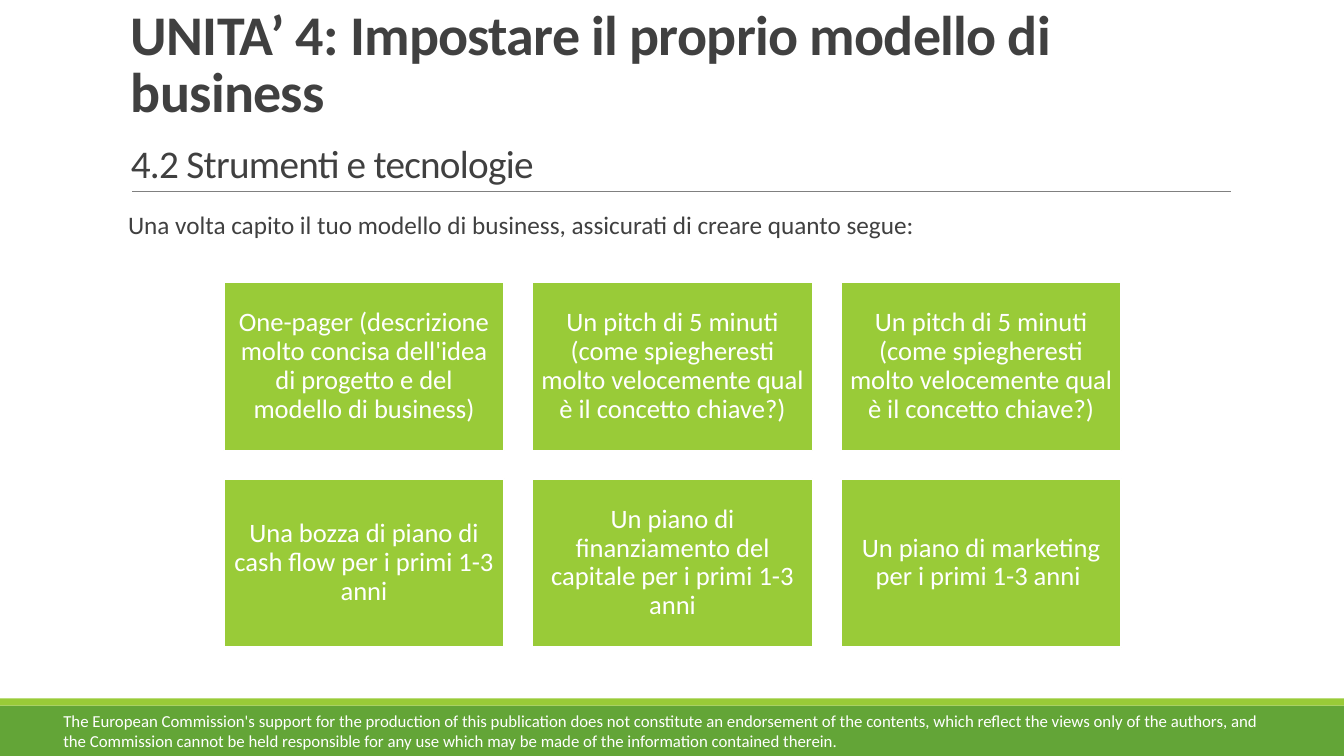
from pptx import Presentation
from pptx.dml.color import RGBColor
from pptx.enum.shapes import MSO_CONNECTOR, MSO_SHAPE
from pptx.enum.text import MSO_ANCHOR, PP_ALIGN
from pptx.oxml.ns import qn
from pptx.util import Inches, Pt
from lxml import etree

COLORS = {"dark_green": "63A537", "lime": "99CB38", "rule": "808080",
          "text": "404040", "white": "FFFFFF"}
SLIDE_WIDTH, SLIDE_HEIGHT = 13.33, 7.5
DELIVERABLES = [
    "One-pager (descrizione molto concisa dell'idea di progetto e del modello di business)",
    "Un pitch di 5 minuti (come spiegheresti molto velocemente qual è il concetto chiave?)",
    "Un pitch di 5 minuti (come spiegheresti molto velocemente qual è il concetto chiave?)",
    "Una bozza di piano di cash flow per i primi 1-3 anni",
    "Un piano di finanziamento del capitale per i primi 1-3 anni",
    "Un piano di marketing per i primi 1-3 anni ",
]
COLUMNS = 3
CARD_WIDTH, CARD_HEIGHT, CARD_GAP = 2.78, 1.67, 0.28
GRID_LEFT, GRID_TOP = 2.22, 2.8
DISCLAIMER = (
    "The European Commission's support for the production of this publication does not "
    "constitute an endorsement of the contents, which reflect the views only of the authors, "
    "and the Commission cannot be held responsible for any use which may be made of the "
    "information contained therein."
)


def rgb(name):
    return RGBColor.from_string(COLORS[name])


class SlideBuilder:
    """Holds the slide and its font, and adds styled elements."""

    def __init__(self, slide, font="Calibri"):
        self.slide = slide
        self.font = font

    def rectangle(self, left, top, width, height, fill, outline=None):
        box = self.slide.shapes.add_shape(
            MSO_SHAPE.RECTANGLE, Inches(left), Inches(top), Inches(width), Inches(height))
        box.shadow.inherit = False
        box.fill.solid()
        box.fill.fore_color.rgb = rgb(fill)
        if outline:
            box.line.color.rgb = rgb(outline)
            box.line.width = Pt(1.25)
        else:
            box.line.fill.background()
        return box

    def rule(self, left, right, y):
        line = self.slide.shapes.add_connector(
            MSO_CONNECTOR.STRAIGHT, Inches(left), Inches(y), Inches(right), Inches(y))
        line.line.color.rgb = rgb("rule")
        line.line.width = Pt(0.5)
        etree.SubElement(line.element.spPr, qn("a:effectLst"))

    def text_frame(self, left, top, width, height, anchor=MSO_ANCHOR.TOP):
        box = self.slide.shapes.add_textbox(
            Inches(left), Inches(top), Inches(width), Inches(height))
        frame = box.text_frame
        frame.word_wrap = True
        frame.vertical_anchor = anchor
        return frame

    def run(self, paragraph, text, size, color="text", bold=False, tracking=0):
        """Add a run; tracking is letter spacing in points."""
        run = paragraph.add_run()
        run.text = text
        run.font.name = self.font
        run.font.size = Pt(size)
        run.font.bold = bold
        run.font.color.rgb = rgb(color)
        if tracking:
            run.font._element.set("spc", str(round(tracking * 100)))

    def title(self, heading, subheading):
        frame = self.text_frame(1.2, 0.31, 11, 1.59, MSO_ANCHOR.BOTTOM)
        unit = frame.paragraphs[0]
        unit.line_spacing = 0.85
        self.run(unit, heading, 40, bold=True, tracking=-0.5)
        section = frame.add_paragraph()
        section.line_spacing = 0.85
        section.space_before = Pt(16)
        self.run(section, subheading, 28, tracking=-0.5)

    def introduction(self, text):
        frame = self.text_frame(1.27, 2.06, 10.9, 0.5)
        frame.margin_left = frame.margin_right = 0
        paragraph = frame.paragraphs[0]
        paragraph.alignment = PP_ALIGN.JUSTIFY
        paragraph.line_spacing = 0.9
        self.run(paragraph, text, 18)

    def card(self, left, top, text):
        frame = self.rectangle(left, top, CARD_WIDTH, CARD_HEIGHT, "lime", "white").text_frame
        frame.word_wrap = True
        frame.vertical_anchor = MSO_ANCHOR.MIDDLE
        frame.margin_left = frame.margin_right = Inches(0.08)
        frame.margin_top = frame.margin_bottom = Inches(0.08)
        paragraph = frame.paragraphs[0]
        paragraph.alignment = PP_ALIGN.CENTER
        paragraph.line_spacing = 0.9
        self.run(paragraph, text, 19, "white")

    def footer(self, text):
        self.rectangle(0, 7, SLIDE_WIDTH, 0.5, "dark_green")
        self.rectangle(0, 6.93, SLIDE_WIDTH, 0.07, "lime")
        frame = self.text_frame(0.53, 7, 12.3, 0.5)
        self.run(frame.paragraphs[0], text, 12, "white")


def main():
    presentation = Presentation()
    presentation.slide_width = Inches(SLIDE_WIDTH)
    presentation.slide_height = Inches(SLIDE_HEIGHT)
    builder = SlideBuilder(presentation.slides.add_slide(presentation.slide_layouts[6]))

    builder.footer(DISCLAIMER)
    builder.rule(1.31, 12.21, 1.9)
    builder.title("UNITA’ 4: Impostare il proprio modello di business",
                  "4.2 Strumenti e tecnologie")
    builder.introduction(
        "Una volta capito il tuo modello di business, assicurati di creare quanto segue: ")
    for index, deliverable in enumerate(DELIVERABLES):
        row, column = divmod(index, COLUMNS)
        builder.card(GRID_LEFT + column * (CARD_WIDTH + CARD_GAP),
                     GRID_TOP + row * (CARD_HEIGHT + CARD_GAP), deliverable)

    presentation.save("out.pptx")


if __name__ == "__main__":
    main()
